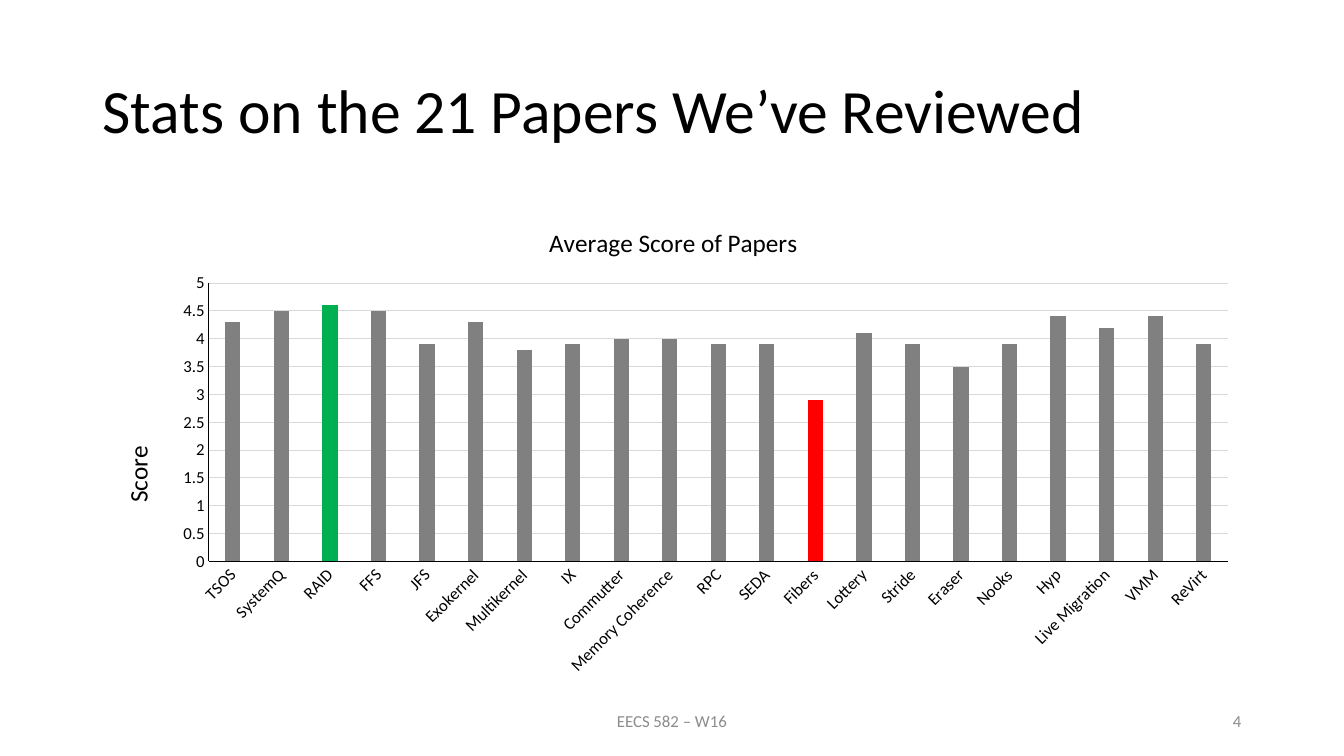
import lxml.etree
import pptx
import pptx.chart.data
import pptx.dml.color
import pptx.enum.chart
import pptx.enum.text
import pptx.oxml.ns
import pptx.util
from dataclasses import dataclass

# Content
HEADLINE = "Stats on the 21 Papers We’ve Reviewed"
COURSE = "EECS 582 – W16"
PAGE = "4"
CHART_TITLE = "Average Score of Papers"
SCORE_LABEL = "Score"
PAPER_SCORES = {
    "TSOS": 4.3, "SystemQ": 4.5, "RAID": 4.6, "FFS": 4.5, "JFS": 3.9,
    "Exokernel": 4.3, "Multikernel": 3.8, "IX": 3.9, "Commutter": 4.0,
    "Memory Coherence": 4.0, "RPC": 3.9, "SEDA": 3.9, "Fibers": 2.9,
    "Lottery": 4.1, "Stride": 3.9, "Eraser": 3.5, "Nooks": 3.9, "Hyp": 4.4,
    "Live Migration": 4.2, "VMM": 4.4, "ReVirt": 3.9,
}


@dataclass(frozen=True)
class Theme:
    font: str = "Calibri"
    ink: str = "000000"
    muted: str = "8C8C8C"
    grid: str = "D9D9D9"
    bar: str = "808080"
    best: str = "00B050"
    worst: str = "FF0000"
    headline: int = 44
    label: int = 18
    small: int = 12
    line: float = 0.75


THEME = Theme()
ALIGN = pptx.enum.text.PP_ALIGN

# Page grid, in inches
WIDTH, HEIGHT = 13.33, 7.5
MARGIN = 0.92
BODY = WIDTH - 2 * MARGIN
FOOTER_TOP, FOOTER_HEIGHT = 6.95, 0.4
COURSE_WIDTH, PAGE_WIDTH = 4.5, 3


def rgb(color):
    return pptx.dml.color.RGBColor.from_string(color)


def style_font(font, size, color=THEME.ink):
    font.name = THEME.font
    font.size = pptx.util.Pt(size)
    font.bold = False
    font.color.rgb = rgb(color)


def add_text(slide, text, box, size, color, align):
    frame = slide.shapes.add_textbox(*map(pptx.util.Inches, box)).text_frame
    frame.word_wrap = True
    frame.vertical_anchor = pptx.enum.text.MSO_ANCHOR.MIDDLE
    paragraph = frame.paragraphs[0]
    paragraph.alignment = align
    run = paragraph.add_run()
    run.text = text
    style_font(run.font, size, color)
    return paragraph


def place(element, index, **shares):
    """Fix a chart part at shares of the chart's size."""
    qn = pptx.oxml.ns.qn
    for old in element.findall(qn("c:layout")):
        element.remove(old)
    layout = lxml.etree.Element(qn("c:layout"))
    manual = lxml.etree.SubElement(layout, qn("c:manualLayout"))
    settings = {"xMode": "edge", "yMode": "edge", **shares}
    if "w" in shares:
        settings = {"layoutTarget": "inner", **settings}
    for tag, value in settings.items():
        lxml.etree.SubElement(manual, qn(f"c:{tag}")).set("val", str(value))
    element.insert(index, layout)


def add_chart_label(title, text, x, y):
    run = title.text_frame.paragraphs[0].add_run()
    run.text = text
    style_font(run.font, THEME.label)
    place(title._element, 1, x=x, y=y)


def style_line(line, color):
    line.color.rgb = rgb(color)
    line.width = pptx.util.Pt(THEME.line)


def add_score_chart(slide, box):
    data = pptx.chart.data.CategoryChartData()
    data.categories = list(PAPER_SCORES)
    data.add_series("Series 1", list(PAPER_SCORES.values()))
    chart = slide.shapes.add_chart(
        pptx.enum.chart.XL_CHART_TYPE.COLUMN_CLUSTERED,
        *map(pptx.util.Inches, box), data).chart
    style_font(chart.font, THEME.small)
    chart.has_legend = False
    chart.has_title = True
    add_chart_label(chart.chart_title, CHART_TITLE, 0.39, 0.04)

    # Columns, with the best and worst papers picked out
    plot = chart.plots[0]
    plot.gap_width, plot.overlap = 219, -27
    plot.vary_by_categories = False
    scores = plot.series[0]
    scores.format.fill.solid()
    scores.format.fill.fore_color.rgb = rgb(THEME.bar)
    papers = list(PAPER_SCORES)
    for pick, color in ((max, THEME.best), (min, THEME.worst)):
        paper = pick(papers, key=PAPER_SCORES.get)
        fill = scores.points[papers.index(paper)].format.fill
        fill.solid()
        fill.fore_color.rgb = rgb(color)

    # Axes
    for axis in (chart.category_axis, chart.value_axis):
        axis.major_tick_mark = pptx.enum.chart.XL_TICK_MARK.NONE
        axis.minor_tick_mark = pptx.enum.chart.XL_TICK_MARK.NONE
        style_font(axis.tick_labels.font, THEME.small)
        style_line(axis.format.line, THEME.ink)
    labels = chart.category_axis.tick_labels.font
    labels._element.getparent().getparent().getparent().find(
        pptx.oxml.ns.qn("a:bodyPr")).set("rot", str(-45 * 60000))
    score_axis = chart.value_axis
    score_axis.minimum_scale, score_axis.maximum_scale = 0, 5
    score_axis.major_unit = 0.5
    score_axis.tick_labels.number_format = "General"
    score_axis.tick_labels.number_format_is_linked = False
    score_axis.has_major_gridlines = True
    style_line(score_axis.major_gridlines.format.line, THEME.grid)
    score_axis.has_title = True
    add_chart_label(score_axis.axis_title, SCORE_LABEL, 0.02, 0.5)
    score_axis.axis_title.text_frame._txBody.bodyPr.set("rot", str(-90 * 60000))
    plot_area = chart._chartSpace.chart.plotArea
    place(plot_area, 0, x=0.1, y=0.17, w=0.88, h=0.58)


def main():
    deck = pptx.Presentation()
    deck.slide_width = pptx.util.Inches(WIDTH)
    deck.slide_height = pptx.util.Inches(HEIGHT)
    slide = deck.slides.add_slide(deck.slide_layouts[6])

    # Headline
    headline = add_text(slide, HEADLINE, (MARGIN, 0.4, BODY, 1.45),
                        THEME.headline, THEME.ink, ALIGN.LEFT)
    headline.line_spacing = 0.9

    # Footer
    for text, left, width, align in (
            (COURSE, (WIDTH - COURSE_WIDTH) / 2, COURSE_WIDTH, ALIGN.CENTER),
            (PAGE, WIDTH - MARGIN - PAGE_WIDTH, PAGE_WIDTH, ALIGN.RIGHT)):
        add_text(slide, text, (left, FOOTER_TOP, width, FOOTER_HEIGHT),
                 THEME.small, THEME.muted, align)

    # Scores
    add_score_chart(slide, (MARGIN, 2, BODY, 4.76))
    deck.save("out.pptx")


if __name__ == "__main__":
    main()
